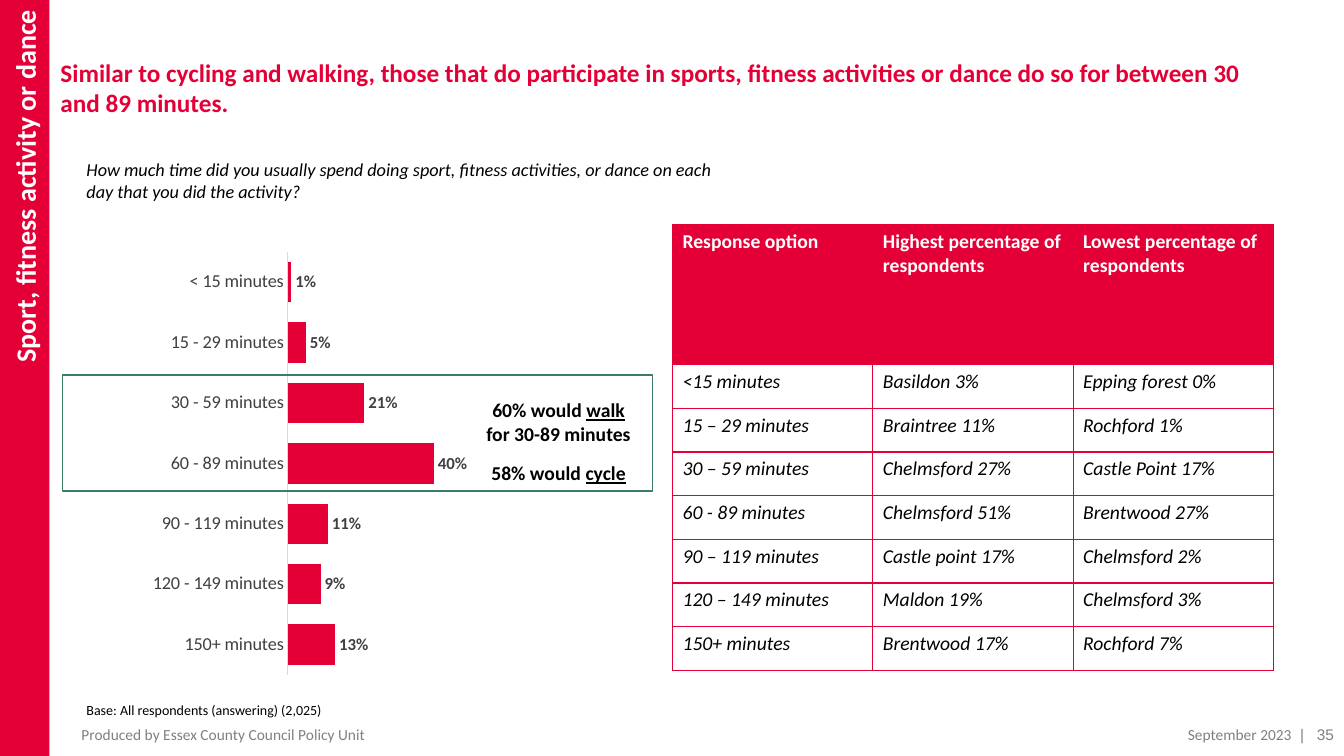
from lxml.etree import SubElement
from pptx import Presentation
from pptx.chart.data import CategoryChartData
from pptx.dml.color import RGBColor
from pptx.enum.chart import XL_CHART_TYPE, XL_LABEL_POSITION, XL_TICK_MARK
from pptx.enum.shapes import MSO_SHAPE
from pptx.enum.text import MSO_ANCHOR, MSO_AUTO_SIZE, PP_ALIGN
from pptx.oxml import parse_xml
from pptx.oxml.ns import nsdecls, qn
from pptx.util import Emu, Pt

PX = 9144
COLORS = {
    "red": "E40037", "white": "FFFFFF", "black": "000000", "label": "404040",
    "axis": "D9D9D9", "footer": "808080", "green": "3A7D64",
}
DURATIONS = {
    "< 15 minutes": 0.01, "15 - 29 minutes": 0.05, "30 - 59 minutes": 0.21,
    "60 - 89 minutes": 0.4, "90 - 119 minutes": 0.11,
    "120 - 149 minutes": 0.09, "150+ minutes": 0.13,
}
DISTRICTS = [
    ("Response option", "Highest percentage of respondents", "Lowest percentage of respondents"),
    ("<15 minutes", "Basildon 3%", "Epping forest 0%"),
    ("15 – 29 minutes", "Braintree 11%", "Rochford 1%"),
    ("30 – 59 minutes", "Chelmsford 27%", "Castle Point 17%"),
    ("60 - 89 minutes", "Chelmsford 51%", "Brentwood 27%"),
    ("90 – 119 minutes", "Castle point 17%", "Chelmsford 2%"),
    ("120 – 149 minutes", "Maldon 19%", "Chelmsford 3%"),
    ("150+ minutes", "Brentwood 17%", "Rochford 7%"),
]
CALLOUT = [("60% would ", "walk", " for 30-89 minutes"), ("58% would ", "cycle")]


def px(length):
    return Emu(round(length * PX))


def place(box):
    return [px(length) for length in box]


def color(name):
    return RGBColor.from_string(COLORS[name])


def style_font(font, size, color_name, bold=False, italic=False, name="Calibri"):
    font.name, font.size, font.bold, font.italic = name, Pt(size), bold, italic
    font.color.rgb = color(color_name)


def set_margins(frame, left, top, right, bottom):
    frame.margin_left, frame.margin_top = px(left), px(top)
    frame.margin_right, frame.margin_bottom = px(right), px(bottom)


def style_paragraph(paragraph, align, *style, **options):
    paragraph.alignment = align
    for run in paragraph.runs:
        style_font(run.font, *style, **options)


def add_text(slide, box, text, *style, align=PP_ALIGN.LEFT, anchor=MSO_ANCHOR.TOP, **options):
    frame = slide.shapes.add_textbox(*place(box)).text_frame
    frame.word_wrap = True
    frame.vertical_anchor = anchor
    frame.text = text
    style_paragraph(frame.paragraphs[0], align, *style, **options)
    return frame


def add_rectangle(slide, box):
    shape = slide.shapes.add_shape(MSO_SHAPE.RECTANGLE, *place(box))
    shape.shadow.inherit = False
    return shape


def add_title(slide, box, text):
    title = slide.shapes.title
    title.left, title.top, title.width, title.height = place(box)
    frame = title.text_frame
    frame.text = text
    frame.auto_size = MSO_AUTO_SIZE.NONE
    frame.vertical_anchor = MSO_ANCHOR.TOP
    set_margins(frame, 0, 0, 0, 0)
    style_paragraph(frame.paragraphs[0], PP_ALIGN.LEFT, 18, "red", bold=True)


def add_sidebar(slide, box, text):
    sidebar = add_rectangle(slide, box)
    sidebar.fill.solid()
    sidebar.fill.fore_color.rgb = color("red")
    sidebar.line.fill.background()
    frame = sidebar.text_frame
    frame.text = text
    frame.vertical_anchor = MSO_ANCHOR.MIDDLE
    set_margins(frame, 10, 10, 10, 5)
    frame._txBody.bodyPr.set("vert", "vert270")
    style_paragraph(frame.paragraphs[0], PP_ALIGN.RIGHT, 20, "white", bold=True)


def add_duration_chart(slide, box):
    data = CategoryChartData(number_format="0%")
    data.categories = list(DURATIONS)
    data.add_series("Series 1", list(DURATIONS.values()))
    chart = slide.shapes.add_chart(XL_CHART_TYPE.BAR_CLUSTERED, *place(box), data).chart
    chart.has_legend = False
    chart.has_title = False
    style_font(chart.font, 10, "black")

    category_axis = chart.category_axis
    category_axis.reverse_order = True
    category_axis.major_tick_mark = XL_TICK_MARK.NONE
    category_axis.format.line.color.rgb = color("axis")
    category_axis.format.line.width = Pt(0.75)
    style_font(category_axis.tick_labels.font, 13, "label")

    value_axis = chart.value_axis
    value_axis.minimum_scale, value_axis.maximum_scale = 0, 1
    value_axis.has_major_gridlines = False
    value_axis.visible = False

    plot = chart.plots[0]
    plot.gap_width = 50
    plot.vary_by_categories = False
    fill = plot.series[0].format.fill
    fill.solid()
    fill.fore_color.rgb = color("red")
    plot.has_data_labels = True
    labels = plot.data_labels
    labels.show_value = True
    labels.number_format, labels.number_format_is_linked = "0%", False
    labels.position = XL_LABEL_POSITION.OUTSIDE_END
    style_font(labels.font, 12, "label", bold=True)

    plot_area = chart._chartSpace.chart.plotArea
    for layout in plot_area.findall(qn("c:layout")):
        plot_area.remove(layout)
    plot_area.insert(0, parse_xml(
        f'<c:layout {nsdecls("c")}><c:manualLayout><c:layoutTarget val="inner"/>'
        '<c:xMode val="edge"/><c:yMode val="edge"/><c:x val="0.33"/><c:y val="0.05"/>'
        '<c:w val="0.6"/><c:h val="0.95"/></c:manualLayout></c:layout>'))


def add_borders(cell):
    properties = cell._tc.get_or_add_tcPr()
    for side in ("a:lnL", "a:lnR", "a:lnT", "a:lnB"):
        line = SubElement(properties, qn(side), w=str(Pt(1)))
        fill = SubElement(line, qn("a:solidFill"))
        SubElement(fill, qn("a:srgbClr"), val=COLORS["red"])


def add_district_table(slide, box, header_height):
    row_count, column_count = len(DISTRICTS), len(DISTRICTS[0])
    table = slide.shapes.add_table(row_count, column_count, *place(box)).table
    table.horz_banding = False
    for column in table.columns:
        column.width = px(box[2] / column_count)
    for index, texts in enumerate(DISTRICTS):
        header = index == 0
        body_height = (box[3] - header_height) / (row_count - 1)
        table.rows[index].height = px(header_height if header else body_height)
        for cell, text in zip(table.rows[index].cells, texts):
            cell.text = text
            style_paragraph(cell.text_frame.paragraphs[0], PP_ALIGN.LEFT, 14,
                            "white" if header else "black", bold=header, italic=not header)
            add_borders(cell)
            if header:
                cell.fill.solid()
                cell.fill.fore_color.rgb = color("red")
            else:
                cell.fill.background()


def add_highlight(slide, box):
    left, top, width, height = box
    outline = add_rectangle(slide, box)
    outline.fill.background()
    outline.line.color.rgb = color("green")
    outline.line.width = Pt(1)
    frame = add_text(slide, (left + width - 170, top + 23, 154, 83), "", 14, "black")
    set_margins(frame, 0, 0, 0, 0)
    frame.add_paragraph()
    for paragraph, pieces in zip(frame.paragraphs, CALLOUT):
        for piece in pieces:
            paragraph.add_run().text = piece
        paragraph.space_after = Pt(11.3)
        style_paragraph(paragraph, PP_ALIGN.CENTER, 14, "black", bold=True)
        paragraph.runs[1].font.underline = True


def add_footer(slide, box):
    left, top, width, height = box
    right = left + width
    style = {"anchor": MSO_ANCHOR.MIDDLE}
    credit = add_text(slide, (left, top, 654, height),
                      "Produced by Essex County Council Policy Unit", 11, "footer", **style)
    credit.paragraphs[0]._p.get_or_add_pPr().set("marL", str(px(9)))
    style["align"] = PP_ALIGN.RIGHT
    add_text(slide, (right - 282, top, 240, height), "September 2023", 11, "footer", **style)
    number = add_text(slide, (right - 85, top, 85, height), "| ", 11, "footer",
                      name="Arial", **style).paragraphs[0]
    number.runs[0].font._element.set("spc", "300")
    number.add_run().text = "35"
    style_paragraph(number, PP_ALIGN.RIGHT, 11, "footer", name="Arial")


def build_duration_slide(presentation):
    slide = presentation.slides.add_slide(presentation.slide_layouts[5])
    add_title(slide, (60, 57, 1203, 116),
              "Similar to cycling and walking, those that do participate in sports, fitness "
              "activities or dance do so for between 30 and 89 minutes.")
    add_text(slide, (76, 152, 667, 54),
             "How much time did you usually spend doing sport, fitness activities, or dance "
             "on each day that you did the activity?", 13, "black", italic=True)
    add_duration_chart(slide, (86, 228, 604, 442))
    add_sidebar(slide, (0, 0, 49, 750), "Sport, fitness activity or dance")
    add_text(slide, (76, 691, 803, 27), "Base: All respondents (answering) (2,025)", 10, "black")
    add_footer(slide, (62, 721, 1271, 15))
    add_district_table(slide, (667, 223, 596, 442), 139)
    add_highlight(slide, (62, 372, 585, 115))


def main():
    presentation = Presentation()
    presentation.slide_width, presentation.slide_height = px(1333), px(750)
    build_duration_slide(presentation)
    presentation.save("out.pptx")


if __name__ == "__main__":
    main()
